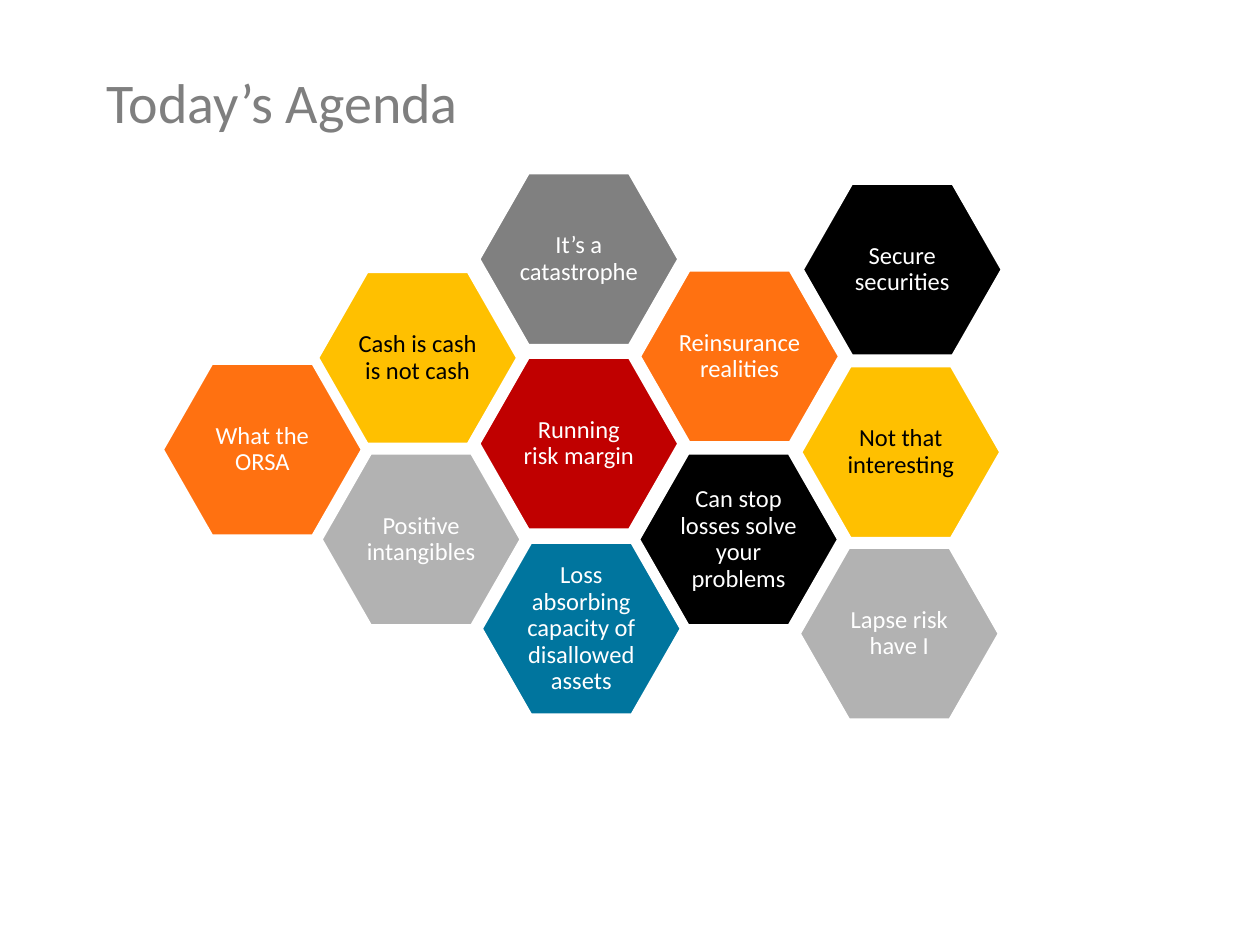
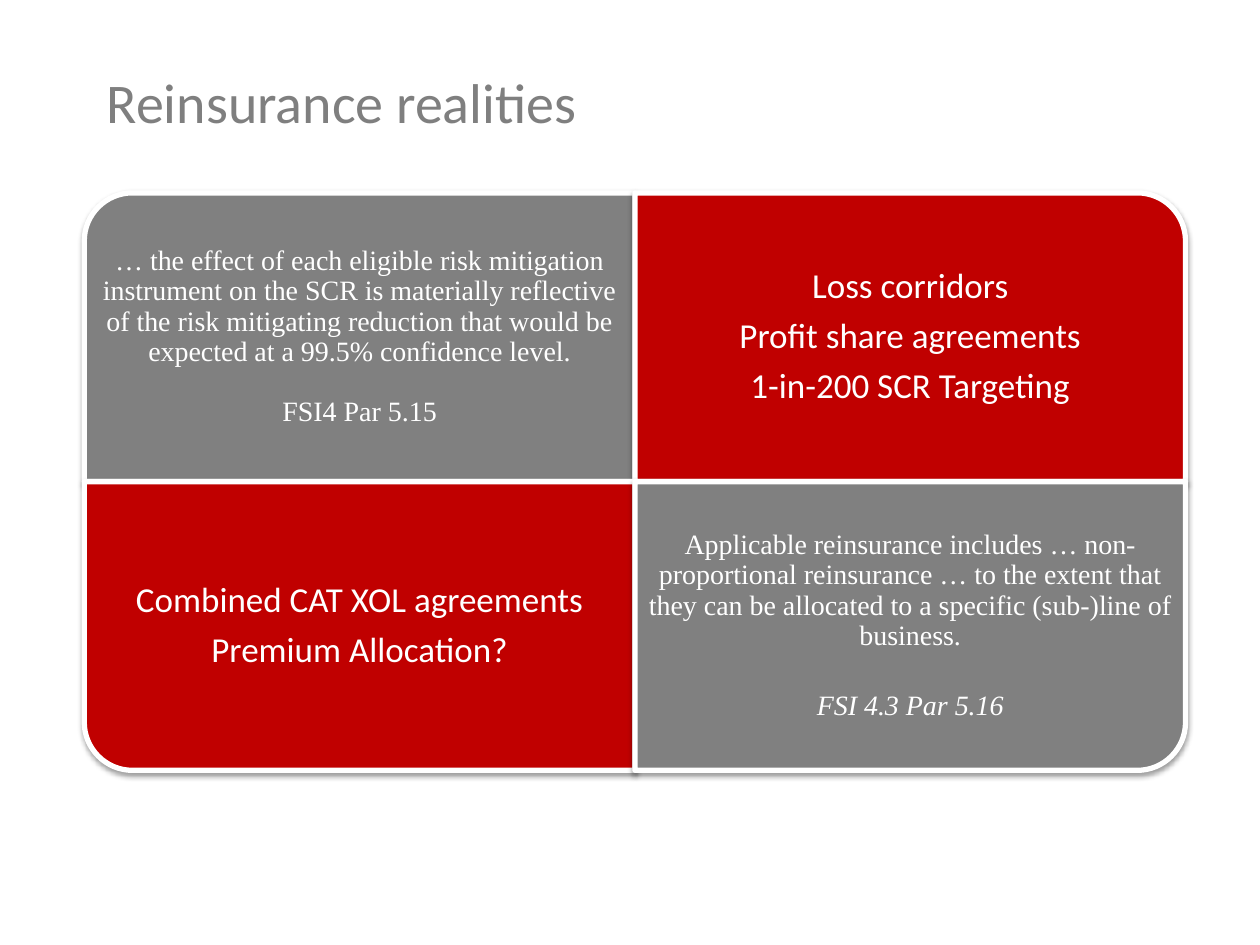
"""Build a two-slide deck: a honeycomb agenda and a four-tile reinsurance matrix."""
from dataclasses import dataclass
from math import cos, pi, sin

from lxml import etree
from pptx import Presentation
from pptx.dml.color import RGBColor
from pptx.enum.shapes import MSO_SHAPE
from pptx.enum.text import MSO_ANCHOR, PP_ALIGN
from pptx.oxml.ns import qn
from pptx.util import Cm, Pt

HEXAGON = MSO_SHAPE.HEXAGON
MIDDLE = MSO_ANCHOR.MIDDLE
LEFT, CENTER = PP_ALIGN.LEFT, PP_ALIGN.CENTER


@dataclass(frozen=True)
class Theme:
    white: str = "FFFFFF"
    black: str = "000000"
    title_grey: str = "7F7F7F"
    grey: str = "808080"
    silver: str = "B2B2B2"
    red: str = "C00000"
    orange: str = "FF7111"
    yellow: str = "FFC000"
    blue: str = "00759E"
    sans: str = "Calibri"
    serif: str = "Times New Roman"
    title_size: float = 32
    topic_size: float = 14
    quote_size: float = 16
    example_size: float = 20


THEME = Theme()

AGENDA_TITLE = "Today’s Agenda"
TOPICS = [
    ("Running risk margin", 9.65, 7.2, THEME.red),
    ("It’s a catastrophe", 9.65, 3.48, THEME.grey),
    ("Reinsurance realities", 12.89, 5.44, THEME.orange),
    ("Can stop losses solve your problems", 12.87, 9.13, THEME.black),
    ("Loss absorbing capacity of disallowed assets", 9.7, 10.93, THEME.blue),
    ("Positive intangibles", 6.47, 9.13, THEME.silver),
    ("Cash is cash is not cash", 6.4, 5.47, THEME.yellow),
    ("What the ORSA", 3.27, 7.32, THEME.orange),
    ("Not that interesting", 16.14, 7.37, THEME.yellow),
    ("Lapse risk have I", 16.11, 11.03, THEME.silver),
    ("Secure securities", 16.17, 3.69, THEME.black),
]
TOPIC_WIDTH, TOPIC_HEIGHT, TOPIC_SLANT = 4.04, 3.49, 0.286
TOPIC_INSET, CORE_INSET = 0.04, 0.2

REALITIES_TITLE = "Reinsurance realities"
QUOTE = dict(fill=THEME.grey, font=THEME.serif, size=THEME.quote_size)
EXAMPLES = dict(fill=THEME.red, font=THEME.sans, size=THEME.example_size)
TILES = [
    (-1, -1, [
        "… the effect of each eligible risk mitigation instrument on the SCR is "
        "materially reflective of the risk mitigating reduction that would be "
        "expected at a 99.5% confidence level.",
        "FSI4 Par 5.15",
    ], dict(QUOTE, last_gap=11.7)),
    (1, -1, ["Loss corridors", "Profit share agreements", "1-in-200 SCR Targeting"],
     EXAMPLES),
    (-1, 1, ["Combined CAT XOL agreements", "Premium Allocation?"], EXAMPLES),
    (1, 1, [
        "Applicable reinsurance includes … non-proportional reinsurance … to the "
        "extent that they can be allocated to a specific (sub-)line of business.",
        "FSI 4.3 Par 5.16",
    ], dict(QUOTE, last_gap=17.3, last_italic=True)),
]
MATRIX_CENTER = (12.8, 9.71)
TILE_WIDTH, TILE_HEIGHT, TILE_RADIUS, TILE_INSET = 11.1, 5.82, 0.97, 0.28
ARC_STEPS = 16


def write(shape, lines, *, size, color, font=THEME.sans, align=CENTER, spacing=0.9,
          after=0.35, inset=None, last_gap=0, last_italic=False):
    frame = shape.text_frame
    frame.word_wrap = True
    frame.vertical_anchor = MIDDLE
    if inset is not None:
        frame.margin_left = frame.margin_right = Cm(inset)
        frame.margin_top = frame.margin_bottom = Cm(inset)
    for index, line in enumerate(lines):
        paragraph = frame.add_paragraph() if index else frame.paragraphs[0]
        paragraph.text = line
        paragraph.alignment = align
        paragraph.line_spacing = spacing
        paragraph.space_after = Pt(size * after)
        paragraph.font.name = font
        paragraph.font.size = Pt(size)
        paragraph.font.color.rgb = RGBColor.from_string(color)
    if last_gap:
        paragraph.space_before = Pt(last_gap)
    if last_italic:
        paragraph.font.italic = True


def paint(shape, fill, border):
    shape.shadow.inherit = False
    shape.fill.solid()
    shape.fill.fore_color.rgb = RGBColor.from_string(fill)
    shape.line.color.rgb = RGBColor.from_string(THEME.white)
    shape.line.width = Pt(border)


def cast_shadow(shape):
    effects = shape._element.spPr.find(qn("a:effectLst"))
    shadow = etree.SubElement(effects, qn("a:outerShdw"), blurRad=str(Pt(3.1)),
                              dist=str(Pt(1.6)), dir="5400000", rotWithShape="0")
    color = etree.SubElement(shadow, qn("a:srgbClr"), val=THEME.black)
    etree.SubElement(color, qn("a:alpha"), val="38000")


def add_titled_slide(deck, title):
    slide = deck.slides.add_slide(deck.slide_layouts[6])
    heading = slide.shapes.add_textbox(Cm(1.9), Cm(0.94), Cm(21.6), Cm(2.18))
    write(heading, [title], size=THEME.title_size, color=THEME.title_grey,
          align=LEFT, spacing=1.0, after=0)
    return slide


def add_topic(slide, topic, left, top, fill):
    cell = slide.shapes.add_shape(HEXAGON, Cm(left), Cm(top),
                                  Cm(TOPIC_WIDTH), Cm(TOPIC_HEIGHT))
    cell.adjustments[0] = TOPIC_SLANT
    paint(cell, fill, 2)
    write(cell, [topic], size=THEME.topic_size,
          color=THEME.black if fill == THEME.yellow else THEME.white,
          inset=CORE_INSET if fill == THEME.red else TOPIC_INSET)


def tile_outline(across, down):
    inner_x, inner_y = MATRIX_CENTER
    outer_x = inner_x + across * TILE_WIDTH
    outer_y = inner_y + down * TILE_HEIGHT
    angles = [pi / 2 * step / ARC_STEPS for step in range(ARC_STEPS + 1)]
    arc = [(outer_x - across * TILE_RADIUS * (1 - cos(angle)),
            outer_y - down * TILE_RADIUS * (1 - sin(angle))) for angle in angles]
    return [(inner_x, inner_y), (outer_x, inner_y), *arc, (inner_x, outer_y)]


def add_tile(slide, across, down, lines, fill, **text_format):
    start, *rest = [(Cm(x), Cm(y)) for x, y in tile_outline(across, down)]
    outline = slide.shapes.build_freeform(*start)
    outline.add_line_segments(rest, close=True)
    tile = outline.convert_to_shape()
    paint(tile, fill, 3)
    cast_shadow(tile)
    write(tile, lines, color=THEME.white, inset=TILE_INSET, **text_format)


def main():
    deck = Presentation()
    deck.slide_width, deck.slide_height = Cm(25.4), Cm(19.05)

    agenda = add_titled_slide(deck, AGENDA_TITLE)
    for topic in TOPICS:
        add_topic(agenda, *topic)

    realities = add_titled_slide(deck, REALITIES_TITLE)
    for across, down, lines, style in TILES:
        add_tile(realities, across, down, lines, **style)

    deck.save("out.pptx")


if __name__ == "__main__":
    main()
